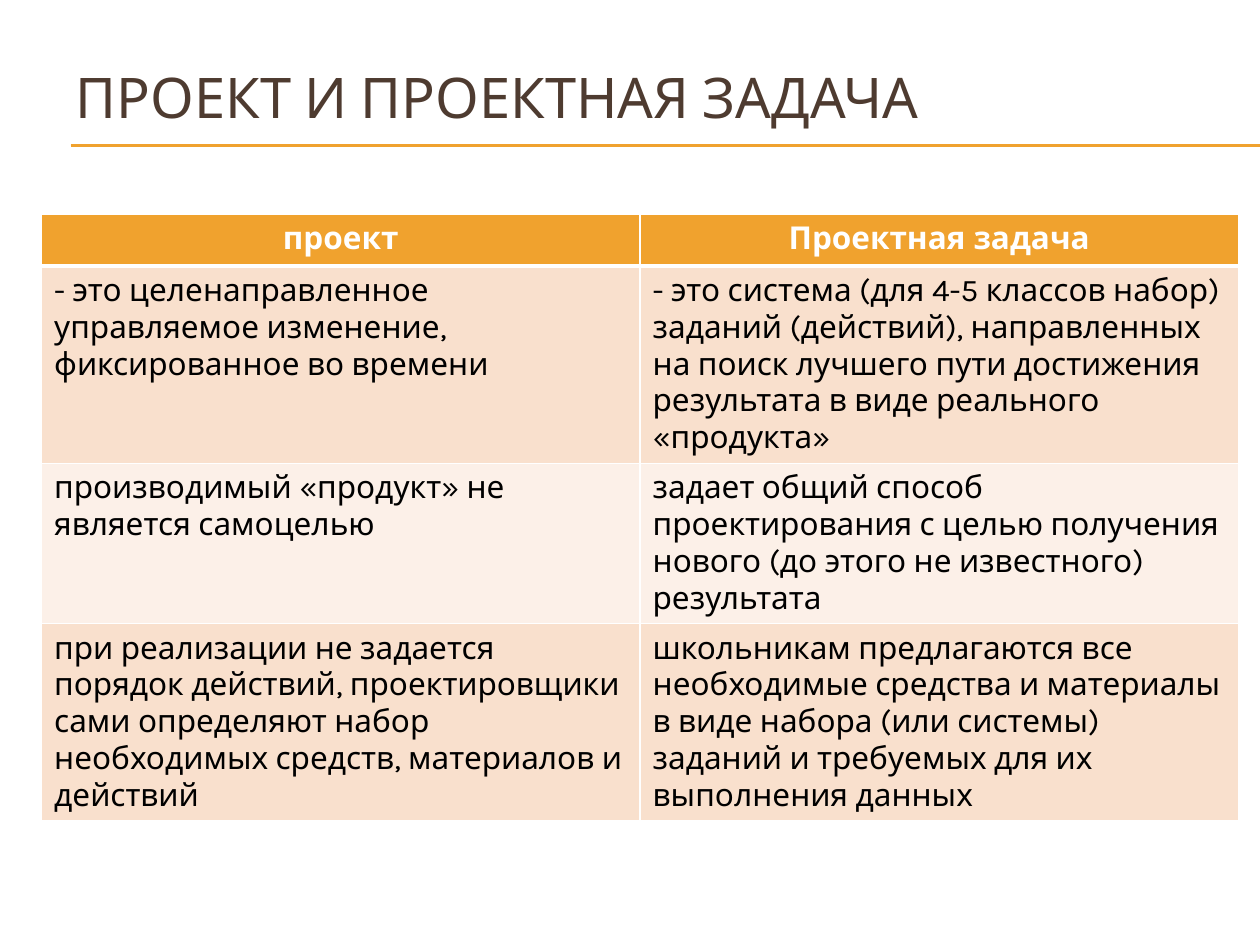
from lxml import etree
from pptx import Presentation
from pptx.dml.color import RGBColor
from pptx.enum.shapes import MSO_CONNECTOR
from pptx.enum.text import MSO_ANCHOR, PP_ALIGN
from pptx.oxml.ns import qn
from pptx.util import Inches, Pt

STRAIGHT = MSO_CONNECTOR.STRAIGHT
MIDDLE = MSO_ANCHOR.MIDDLE
LEFT, CENTER = PP_ALIGN.LEFT, PP_ALIGN.CENTER

THEME = {
    "font": "Karla",
    "title_size": 32,
    "table_size": 18,
    "title": "4E3B30",
    "accent": "F0A22E",
    "bands": ("F9E0CD", "FCF0E8"),
    "text": "000000",
    "white": "FFFFFF",
}

ROWS = [
    ("проект", "Проектная задача"),
    ("- это целенаправленное управляемое изменение, фиксированное во времени",
     "- это система (для 4-5 классов набор) заданий (действий), направленных на поиск "
     "лучшего пути достижения результата в виде реального «продукта»"),
    ("производимый «продукт» не является самоцелью",
     "задает общий способ проектирования с целью получения нового "
     "(до этого не известного) результата"),
    ("при реализации не задается порядок действий, проектировщики сами определяют набор "
     "необходимых средств, материалов и действий",
     "школьникам предлагаются все необходимые средства и материалы в виде набора "
     "(или системы) заданий и требуемых для их выполнения данных"),
]


def add_run(paragraph, text, size, color, bold=False):
    run = paragraph.add_run()
    run.text = text
    run.font.name = THEME["font"]
    run.font.size = Pt(size)
    run.font.bold = bold
    run.font.color.rgb = RGBColor.from_string(color)


def add_border(cell, side, points):
    line = etree.SubElement(cell._tc.get_or_add_tcPr(), qn(f"a:ln{side}"), w=str(Pt(points)))
    fill = etree.SubElement(line, qn("a:solidFill"))
    etree.SubElement(fill, qn("a:srgbClr"), val=THEME["white"])


presentation = Presentation()
presentation.slide_width = Inches(10)
presentation.slide_height = Inches(7.5)
slide = presentation.slides.add_slide(presentation.slide_layouts[5])

# Double rule under the title
for y in (1.15, 1.16):
    rule = slide.shapes.add_connector(STRAIGHT, Inches(0.56), Inches(y), Inches(10), Inches(y))
    rule.line.color.rgb = RGBColor.from_string(THEME["accent"])
    rule.line.width = Pt(0.75)
    etree.SubElement(rule._element.spPr, qn("a:effectLst"))

# Title
title = slide.shapes.title
title.left, title.top = Inches(0.5), Inches(0.3)
title.width, title.height = Inches(9), Inches(0.93)
title.text_frame.vertical_anchor = MIDDLE
title_paragraph = title.text_frame.paragraphs[0]
title_paragraph.alignment = LEFT
add_run(title_paragraph, "ПРОЕКТ И ПРОЕКТНАЯ ЗАДАЧА", THEME["title_size"], THEME["title"])

# Comparison table: rows grow to fit their text
table_shape = slide.shapes.add_table(
    len(ROWS), 2, Inches(0.33), Inches(1.7), Inches(9.5), Inches(4.01))
table = table_shape.table
for row in table.rows:
    row.height = Inches(0.41)
table_shape.height = Inches(4.01)

for row_index, texts in enumerate(ROWS):
    header = row_index == 0
    fill_color = THEME["accent"] if header else THEME["bands"][(row_index - 1) % 2]
    for column_index, text in enumerate(texts):
        cell = table.cell(row_index, column_index)
        cell.margin_left = cell.margin_right = Inches(0.1)
        cell.margin_top = cell.margin_bottom = Inches(0.05)

        # A thick line parts the header from the body
        widths = {"L": 1, "R": 1, "T": 3 if row_index == 1 else 1, "B": 3 if header else 1}
        for side, points in widths.items():
            add_border(cell, side, points)
        cell.fill.solid()
        cell.fill.fore_color.rgb = RGBColor.from_string(fill_color)

        paragraph = cell.text_frame.paragraphs[0]
        paragraph.alignment = CENTER if header else LEFT
        add_run(paragraph, text, THEME["table_size"],
                THEME["white"] if header else THEME["text"], bold=header)

presentation.save("out.pptx")
